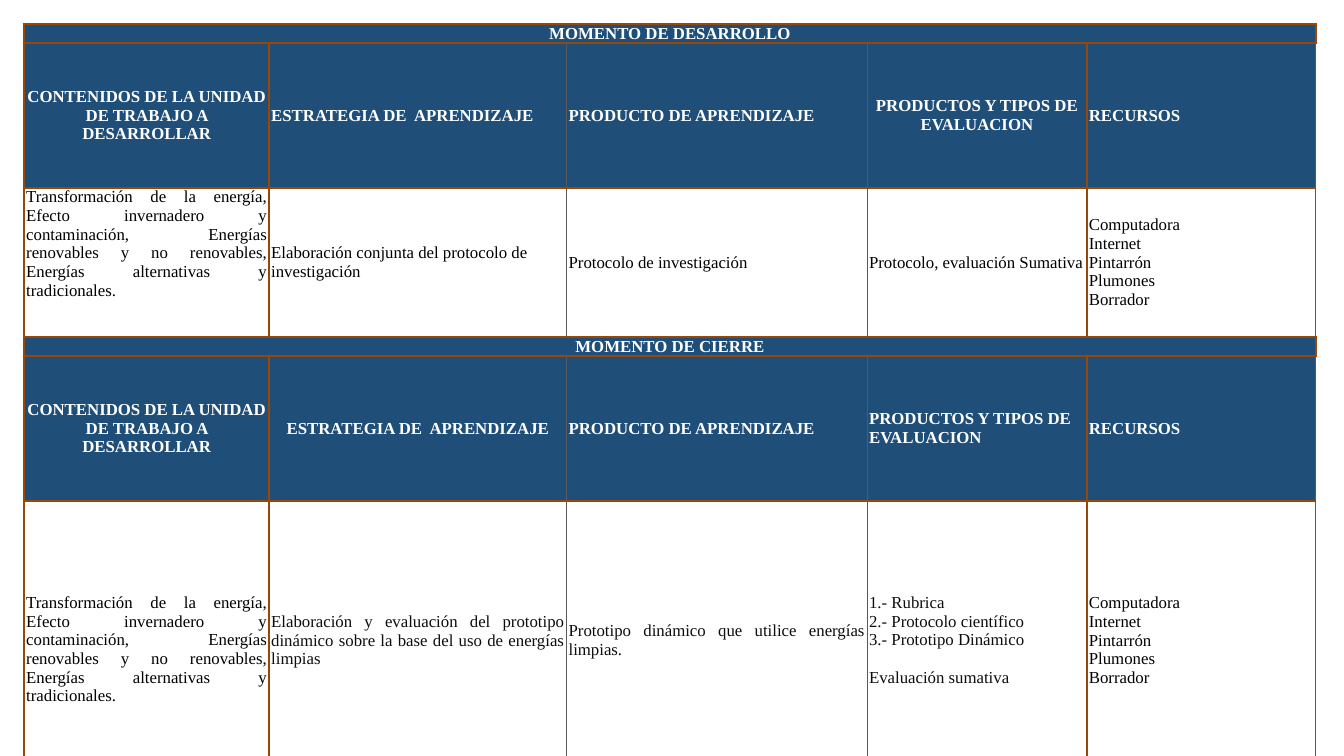
from dataclasses import dataclass

from lxml import etree
from pptx import Presentation
from pptx.dml.color import RGBColor
from pptx.enum.text import MSO_ANCHOR, PP_ALIGN
from pptx.oxml.ns import qn
from pptx.table import Table, _Cell
from pptx.util import Emu, Inches, Pt

LEFT, MID, JUST = PP_ALIGN.LEFT, PP_ALIGN.CENTER, PP_ALIGN.JUSTIFY
TOP, CENTER = MSO_ANCHOR.TOP, MSO_ANCHOR.MIDDLE

NAVY = RGBColor(0x1F, 0x4E, 0x79)
WHITE = RGBColor(0xFF, 0xFF, 0xFF)
BLACK = RGBColor(0x00, 0x00, 0x00)
INK = RGBColor(0x0D, 0x0D, 0x0D)
BROWN = RGBColor(0x98, 0x48, 0x06)
GRAY = RGBColor(0x59, 0x59, 0x59)

FONT = "Times New Roman"
SIZE = Pt(12)
LINE = 0.18
COLS = (2.43, 2.95, 2.98, 2.18, 2.27)
ROWS = (LINE, 1.44, 1.48, LINE, 1.44, 2.77)
EDGE = 0.24
THIN_LEFT = (2, 3)
THIN_RIGHT = (1, 2, 4)


@dataclass(frozen=True)
class Entry:
    text: str
    align: PP_ALIGN = LEFT
    color: RGBColor = BLACK
    anchor: MSO_ANCHOR = CENTER
    top: float = 0
    gap: bool = False  # one line of space before the last paragraph


@dataclass(frozen=True)
class Stage:
    title: str
    heads: tuple[PP_ALIGN, ...]
    body: tuple[Entry, ...]


HEADS = (
    "CONTENIDOS DE LA UNIDAD DE TRABAJO A DESARROLLAR",
    "ESTRATEGIA DE  APRENDIZAJE",
    "PRODUCTO DE APRENDIZAJE",
    "PRODUCTOS Y TIPOS DE EVALUACION",
    "RECURSOS",
)
TOPICS = (
    "Transformación de la energía, Efecto invernadero y contaminación, "
    "Energías renovables y no renovables, Energías alternativas y tradicionales."
)
TOOLS = Entry("Computadora\nInternet\nPintarrón\nPlumones\nBorrador")

STAGES = (
    Stage("MOMENTO DE DESARROLLO", (MID, LEFT, LEFT, MID, LEFT), (
        Entry(TOPICS, JUST, anchor=TOP),
        Entry("Elaboración conjunta del protocolo de investigación"),
        Entry("Protocolo de investigación", JUST),
        Entry("Protocolo, evaluación Sumativa", JUST),
        TOOLS,
    )),
    Stage("MOMENTO DE CIERRE", (MID, MID, LEFT, LEFT, LEFT), (
        Entry(TOPICS, JUST, top=LINE),
        Entry("Elaboración y evaluación del prototipo dinámico sobre la base "
              "del uso de energías limpias", JUST, INK),
        Entry("Prototipo dinámico que utilice energías limpias.", JUST, INK),
        Entry("1.- Rubrica\n2.- Protocolo científico\n3.- Prototipo Dinámico\n"
              "Evaluación sumativa", JUST, INK, gap=True),
        TOOLS,
    )),
)


def border(cell: _Cell, thin: set[str]) -> None:
    """Draw the four sides, with those named in thin as gray hairlines."""
    props = cell._tc.get_or_add_tcPr()
    for spot, side in enumerate("LRTB"):
        color, width = (GRAY, Pt(0.5)) if side in thin else (BROWN, Pt(1.5))
        line = etree.Element(qn(f"a:ln{side}"), w=str(int(width)))
        fill = etree.SubElement(line, qn("a:solidFill"))
        etree.SubElement(fill, qn("a:srgbClr"), val=str(color))
        props.insert(spot, line)


def write(cell: _Cell, entry: Entry, bold: bool) -> None:
    frame = cell.text_frame
    frame.text = entry.text
    for para in frame.paragraphs:
        para.alignment = entry.align
        for run in para.runs:
            font = run.font
            font.name, font.size, font.bold = FONT, SIZE, bold
            font.color.rgb = entry.color
    if entry.gap:
        frame.paragraphs[-1].space_before = Pt(13.8)
    cell.vertical_anchor = entry.anchor
    cell.margin_top = Inches(entry.top)


def dress(cell: _Cell, fill: RGBColor, thin: set[str]) -> None:
    cell.fill.solid()
    cell.fill.fore_color.rgb = fill
    cell.margin_left = cell.margin_right = Inches(0.02)
    cell.margin_top = cell.margin_bottom = 0
    border(cell, thin)


def add_stage(table: Table, start: int, stage: Stage) -> None:
    """Fill three rows: banner, heads and body."""
    for col in range(len(COLS)):
        dress(table.cell(start, col), NAVY, set())
    banner = table.cell(start, 0)
    banner.merge(table.cell(start, len(COLS) - 1))
    write(banner, Entry(stage.title, MID, WHITE), True)

    for col, (head, align, entry) in enumerate(zip(HEADS, stage.heads, stage.body)):
        thin = {side for side, cols in (("L", THIN_LEFT), ("R", THIN_RIGHT))
                if col in cols}
        top, low = table.cell(start + 1, col), table.cell(start + 2, col)
        dress(top, NAVY, thin)
        write(top, Entry(head, align, WHITE), True)
        dress(low, WHITE, thin)
        write(low, entry, False)


def main() -> None:
    deck = Presentation()
    deck.slide_width, deck.slide_height = Inches(13.33), Inches(7.5)
    slide = deck.slides.add_slide(deck.slide_layouts[6])
    table = slide.shapes.add_table(
        len(ROWS), len(COLS), Inches(EDGE), Inches(EDGE),
        Emu(Inches(sum(COLS))), Emu(Inches(sum(ROWS)))).table
    table.first_row = table.horz_banding = False
    for col, width in zip(table.columns, COLS):
        col.width = Inches(width)
    for row, height in zip(table.rows, ROWS):
        row.height = Inches(height)
    for index, stage in enumerate(STAGES):
        add_stage(table, 3 * index, stage)
    deck.save("out.pptx")


if __name__ == "__main__":
    main()
